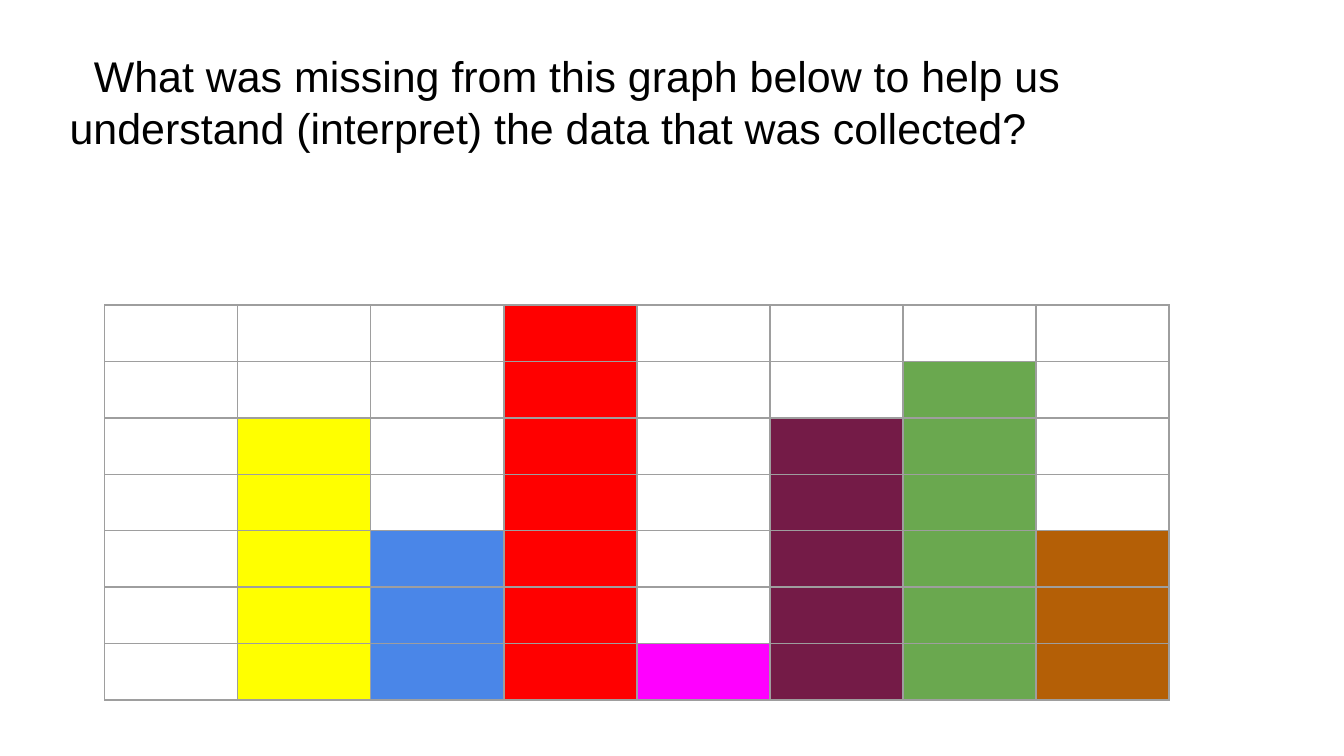
"""Build a slide that asks what an unlabelled bar grid is missing."""
from dataclasses import dataclass

from lxml import etree
from pptx import Presentation
from pptx import util as u
from pptx.dml.color import RGBColor
from pptx.oxml import ns


@dataclass(frozen=True)
class Theme:
    font: str = "Arial"
    size: float = 23
    ink: str = "000000"
    line: str = "9E9E9E"
    width: float = 0.75


@dataclass(frozen=True)
class Bar:
    col: int
    count: int
    fill: str


THEME = Theme()
WIDE = 10
HIGH = WIDE * 9 / 16
ROWS, COLS = 7, 8
CELL_W, CELL_H = 0.99, 0.42
TITLE = ("What was missing from this graph below to help us "
         "understand (interpret) the data that was collected?")
BARS = [
    Bar(1, 5, "FFFF00"),
    Bar(2, 3, "4A86E8"),
    Bar(3, 7, "FF0000"),
    Bar(4, 1, "FF00FF"),
    Bar(5, 5, "741B47"),
    Bar(6, 6, "6AA84F"),
    Bar(7, 3, "B45F06"),
]


def outline(cell) -> None:
    props = cell._tc.get_or_add_tcPr()
    for i, side in enumerate(("a:lnL", "a:lnR", "a:lnT", "a:lnB")):
        line = etree.Element(ns.qn(side), w=str(u.Pt(THEME.width)))
        fill = etree.SubElement(line, ns.qn("a:solidFill"))
        etree.SubElement(fill, ns.qn("a:srgbClr"), val=THEME.line)
        props.insert(i, line)


def draw_grid(slide, left: float, top: float, bars: list[Bar]) -> None:
    frame = slide.shapes.add_table(
        ROWS, COLS, u.Inches(left), u.Inches(top),
        u.Inches(COLS * CELL_W), u.Inches(ROWS * CELL_H))
    table = frame.table
    table.first_row = table.horz_banding = False
    for col in table.columns:
        col.width = u.Inches(CELL_W)
    for row in table.rows:
        row.height = u.Inches(CELL_H)
    for cell in table.iter_cells():
        cell.fill.background()
        outline(cell)
    for bar in bars:
        for row in range(ROWS - bar.count, ROWS):
            fill = table.cell(row, bar.col).fill
            fill.solid()
            fill.fore_color.rgb = RGBColor.from_string(bar.fill)


def draw_title(slide, words: str) -> None:
    box = slide.shapes.add_textbox(
        u.Inches(0.42), u.Inches(0.27), u.Inches(9.17), u.Inches(1.37))
    frame = box.text_frame
    frame.word_wrap = True
    frame.margin_left = frame.margin_right = u.Inches(0.1)
    frame.margin_top = frame.margin_bottom = u.Inches(0.1)
    para = frame.paragraphs[0]
    para.text = words
    para.font.name = THEME.font
    para.font.size = u.Pt(THEME.size)
    para.font.color.rgb = RGBColor.from_string(THEME.ink)
    props = para._p.get_or_add_pPr()
    props.set("marL", "0")
    props.set("indent", str(u.Inches(0.18)))


def main() -> None:
    deck = Presentation()
    deck.slide_width, deck.slide_height = u.Inches(WIDE), u.Inches(HIGH)
    slide = deck.slides.add_slide(deck.slide_layouts[6])
    draw_grid(slide, 0.78, 2.27, BARS)
    draw_title(slide, TITLE)
    deck.save("out.pptx")


if __name__ == "__main__":
    main()
